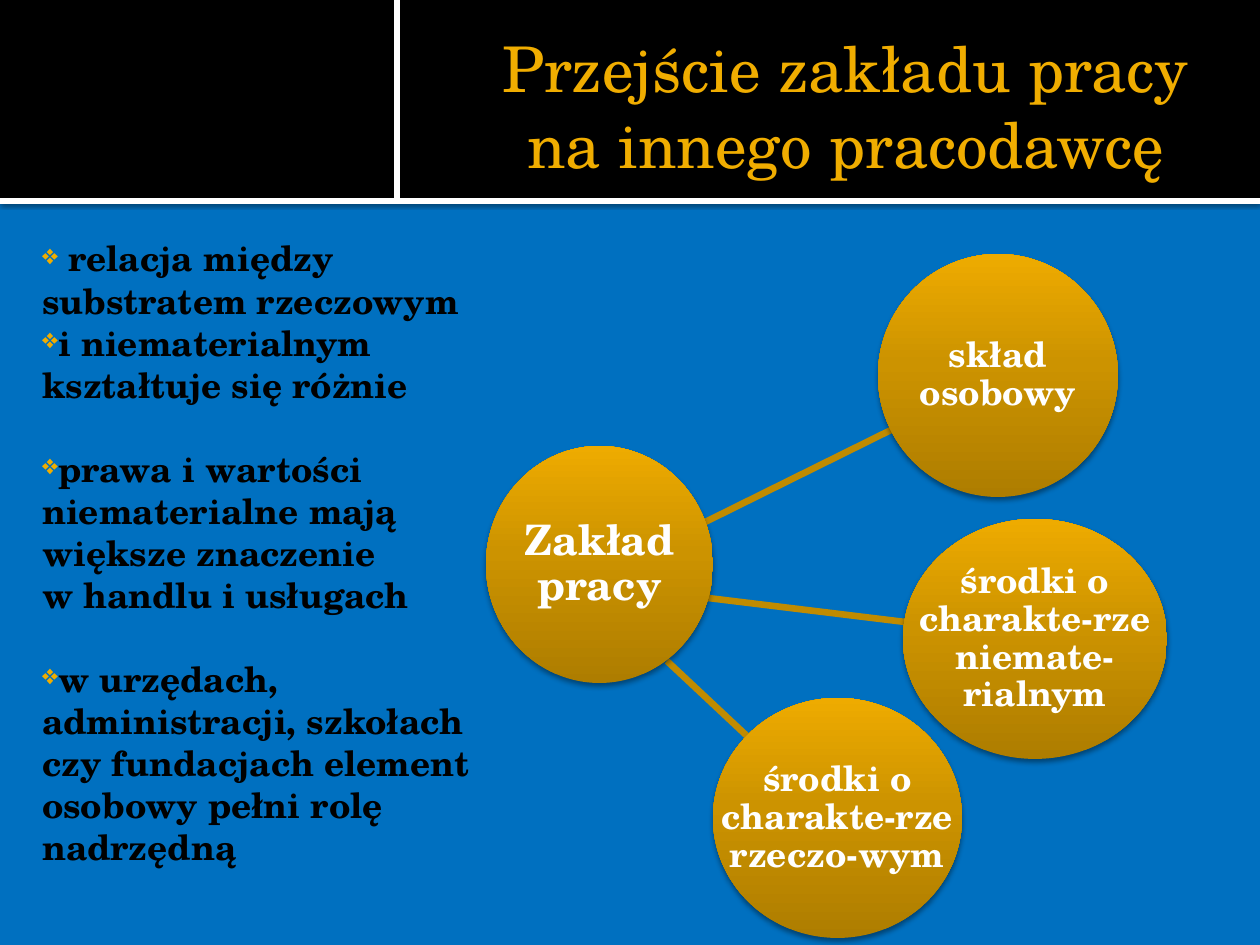
from copy import deepcopy

from pptx import Presentation
from pptx import util as u
from pptx.dml.color import RGBColor
from pptx.enum import shapes, text
from pptx.oxml import ns, xmlchemy

FONT = "TeX Gyre Schola"
GOLD = "F0AD00"
STOPS = [(0, "AE7D00"), (0.55, "CC9300"), (1, "EEAB00")]
HUB = ("Zakład pracy", 24, (486, 446, 227, 237))
NODES = [
    ("skład osobowy", (878, 254, 240, 243), (667, 541, 891, 430)),
    ("środki o charakte-rze niemate-rialnym", (903, 519, 264, 240), (667, 593, 905, 622)),
    ("środki o charakte-rze rzeczo-wym", (713, 698, 249, 240), (667, 661, 747, 736)),
]
POINTS = [
    (" relacja między substratem rzeczowym", 0),
    ("i niematerialnym kształtuje się różnie", 0),
    ("prawa i wartości niematerialne mają większe znaczenie \vw handlu i usługach", 24),
    ("w urzędach, administracji, szkołach czy fundacjach element osobowy pełni rolę nadrzędną", 24),
]


def px(n):
    return u.Emu(round(n * 914400 / 126))


def color(code):
    return RGBColor.from_string(code)


def child(node, tag, **attrs):
    kid = xmlchemy.OxmlElement(tag)
    for key, value in attrs.items():
        kid.set(key, str(value))
    node.append(kid)
    return kid


def shade(shape, alpha, blur, dist):
    shape.shadow.inherit = False
    effect = shape._element.spPr.find(ns.qn("a:effectLst"))
    outer = child(effect, "a:outerShdw", blurRad=u.Pt(blur), dist=u.Pt(dist),
                  dir=5400000, algn="ctr", rotWithShape=0)
    child(child(outer, "a:srgbClr", val="000000"), "a:alpha", val=alpha * 1000)


def add_rect(slide, box, fill):
    rect = slide.shapes.add_shape(shapes.MSO_SHAPE.RECTANGLE, *map(px, box))
    rect.shadow.inherit = False
    rect.fill.solid()
    rect.fill.fore_color.rgb = color(fill)
    rect.line.fill.background()
    return rect


def add_line(slide, ends):
    line = slide.shapes.add_connector(shapes.MSO_CONNECTOR.STRAIGHT, *map(px, ends))
    line.line.color.rgb = color("C08B00")
    line.line.width = u.Pt(3.78)
    child(line._element.spPr, "a:effectLst")


def add_bullet(para):
    props = para._p.get_or_add_pPr()
    child(child(props, "a:buClr"), "a:srgbClr", val=GOLD)
    child(props, "a:buSzPct", val=80000)
    child(props, "a:buChar", char="❖")


def add_text(slide, box, items, size, fill, bold=True, inset=(1, 1, 1, 1),
             anchor="MIDDLE", align="CENTER", lead=None, bullet=False):
    frame = slide.shapes.add_textbox(*map(px, box)).text_frame
    frame.word_wrap = True
    frame.vertical_anchor = text.MSO_ANCHOR[anchor]
    (frame.margin_left, frame.margin_top,
     frame.margin_right, frame.margin_bottom) = map(px, inset)
    for i, (words, gap) in enumerate(items):
        para = frame.add_paragraph() if i else frame.paragraphs[0]
        para.text = words
        para.alignment = text.PP_ALIGN[align]
        if lead:
            para.line_spacing = lead
        if gap:
            para.space_before = u.Pt(gap)
        if bullet:
            add_bullet(para)
        for run in para.runs:
            run.font.name = FONT
            run.font.size = u.Pt(size)
            run.font.bold = bold
            run.font.color.rgb = color(fill)


def add_ball(slide, words, size, box):
    ball = slide.shapes.add_shape(shapes.MSO_SHAPE.OVAL, *map(px, box))
    ball.line.fill.background()
    ball.fill.gradient()
    ball.fill.gradient_angle = 90
    stops = ball._element.spPr.find(".//" + ns.qn("a:gsLst"))
    stops.append(deepcopy(stops[-1]))
    for stop, (place, code) in zip(ball.fill.gradient_stops, STOPS):
        stop.position = place
        stop.color.rgb = color(code)
    shade(ball, 38, 3.1, 2)
    add_text(slide, box, [(words, 0)], size, "FFFFFF", lead=0.9)


def main():
    deck = Presentation()
    deck.slide_width, deck.slide_height = px(1260), px(945)
    slide = deck.slides.add_slide(deck.slide_layouts[6])
    slide.background.fill.solid()
    slide.background.fill.fore_color.rgb = color("0070C0")

    shade(add_rect(slide, (0, 198, 1260, 6), "FFFFFF"), 60, 2.5, 0.8)
    add_rect(slide, (0, 0, 1260, 198), "000000")
    add_rect(slide, (394, 0, 6, 200), "FFFFFF")
    add_text(slide, (471, 26, 745, 155),
             [("Przejście zakładu pracy na innego pracodawcę", 0)], 36, GOLD,
             bold=False, inset=(10, 6, 6, 0), anchor="BOTTOM")

    for _, _, ends in NODES:
        add_line(slide, ends)
    add_ball(slide, *HUB)
    for words, box, _ in NODES:
        add_ball(slide, words, 20, box)

    add_text(slide, (35, 224, 486, 721), POINTS, 20, "000000",
             inset=(7, 13, 13, 6), anchor="TOP", align="LEFT", bullet=True)
    deck.save("out.pptx")


if __name__ == "__main__":
    main()
